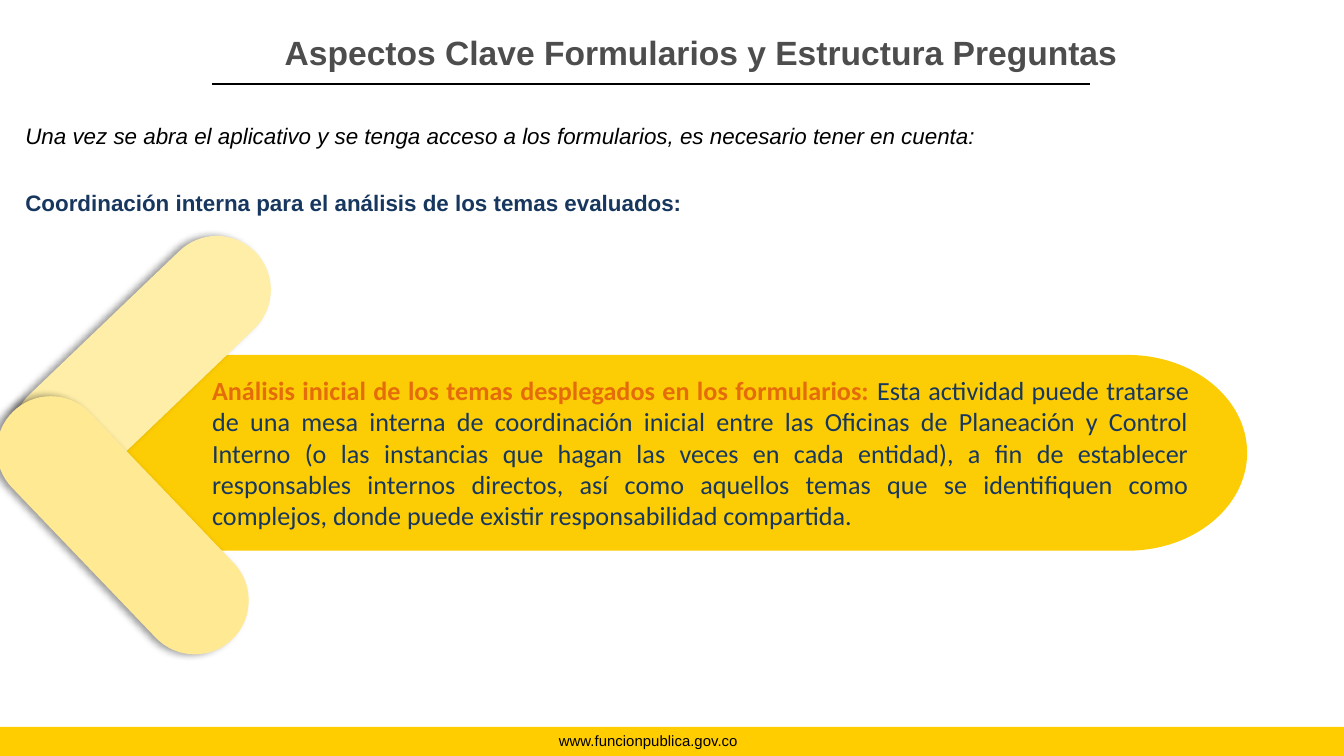
import math
from lxml import etree
from pptx import Presentation
from pptx import util as u
from pptx.dml.color import RGBColor
from pptx.enum import shapes, text
from pptx.oxml import parse_xml
from pptx.oxml.ns import qn

Cm, Pt = u.Cm, u.Pt
BLACK = RGBColor(0x00, 0x00, 0x00)
GREY = RGBColor(0x4D, 0x4D, 0x4D)
NAVY = RGBColor(0x17, 0x37, 0x5E)
ORANGE = RGBColor(0xE4, 0x6C, 0x0A)
FOOTER_YELLOW = RGBColor(0xFF, 0xCD, 0x00)
PILL_YELLOW = RGBColor(0xFC, 0xCC, 0x04)
UPPER_CREAM = RGBColor(0xFF, 0xEE, 0xA7)
LOWER_CREAM = RGBColor(0xFF, 0xEA, 0x93)

SHADOW = (
    '<a:effectLst xmlns:a="http://schemas.openxmlformats.org/drawingml/2006/main">'
    '<a:outerShdw blurRad="50800" dist="38100" dir="10800000" rotWithShape="0">'
    '<a:srgbClr val="000000"><a:alpha val="40000"/></a:srgbClr>'
    '</a:outerShdw></a:effectLst>'
)


def arc(cx, cy, rx, ry, *degrees):
    """A line to the first angle, then one Bézier curve to each further angle."""
    def point(a, k):
        return (cx + rx * (math.cos(a) - k * math.sin(a)),
                cy + ry * (math.sin(a) + k * math.cos(a)))
    angles = [math.radians(d) for d in degrees]
    steps = [[point(angles[0], 0)]]
    for a, b in zip(angles, angles[1:]):
        k = 4 / 3 * math.tan((b - a) / 4)
        steps.append([point(a, k), point(b, -k), point(b, 0)])
    return steps


def outline(steps, color):
    """Closed freeform in cm; a step of one point is a line, of three a curve."""
    pts = [(Cm(x), Cm(y)) for step in steps for x, y in step]
    builder = s.shapes.build_freeform(*pts[0])
    builder.add_line_segments(pts[1:], close=True)
    sp = builder.convert_to_shape()
    lines = iter(list(sp._element.iter(qn("a:lnTo"))))
    for step in steps[1:]:
        first = next(lines)
        if len(step) == 3:
            first.tag = qn("a:cubicBezTo")
            for extra in (next(lines), next(lines)):
                first.append(extra[0])
                extra.getparent().remove(extra)
    sp.shadow.inherit = False
    sp.fill.solid()
    sp.fill.fore_color.rgb = color
    sp.line.fill.background()
    return sp


prs = Presentation()
prs.slide_width, prs.slide_height = Cm(25.4), Cm(14.29)
s = prs.slides.add_slide(prs.slide_layouts[5])

# Footer band and title rule
band = s.shapes.add_shape(shapes.MSO_SHAPE.RECTANGLE, 0, Cm(13.74), Cm(25.4), Cm(0.55))
band.shadow.inherit = False
band.fill.solid()
band.fill.fore_color.rgb = FOOTER_YELLOW
band.line.fill.background()

rule = s.shapes.add_connector(
    shapes.MSO_CONNECTOR.STRAIGHT, Cm(4.01), Cm(1.58), Cm(20.6), Cm(1.58))
rule.line.color.rgb = BLACK
rule.line.width = Pt(1)
etree.SubElement(rule.line._ln.getparent(), qn("a:effectLst"))

# Pill with a rounded right end
left_end = [(1.8, 10.41), (0.94, 9.73), (0.71, 9.47), (0.41, 8.56), (0.71, 7.67), (0.99, 7.39)]
outline([[(1.8, 6.71)]] + arc(21.31, 8.56, 2.26, 1.85, -90, 0, 90)
        + [[point] for point in left_end], PILL_YELLOW)

# Chevron: the same capsule twice, the lower arm turned a quarter
capsule = arc(4.1, 5.48, 1.02, 1.02, -134, -90, 0, 46) + arc(1.26, 8.2, 1.02, 1.02, 46, 90, 180, 226)
for cx, cy, rotation, color in [(2.68, 6.84, 0, UPPER_CREAM), (2.32, 9.93, 90, LOWER_CREAM)]:
    arm = outline(capsule, color)
    arm.left = Cm(cx) - arm.width // 2
    arm.top = Cm(cy) - arm.height // 2
    arm.rotation = rotation
    effects = arm._element.spPr.find(qn("a:effectLst"))
    effects.getparent().replace(effects, parse_xml(SHADOW))

# Title and texts: position in cm, alignment, side inset, runs
LEFT, CENTER, JUSTIFY = text.PP_ALIGN.LEFT, text.PP_ALIGN.CENTER, text.PP_ALIGN.JUSTIFY
small = {"name": "Arial", "size": Pt(8)}
heading = {"name": "Arial", "size": Pt(18), "bold": True}
intro = {"name": "Arial", "size": Pt(12), "italic": True}
subtitle = {"name": "Arial", "size": Pt(12), "bold": True}
lead = {"name": "Calibri", "size": Pt(14), "bold": True}
body = {"name": "Calibri", "size": Pt(14), "bold": False}

texts = [
    ((5.13, 0.48, 16.64, 1.09), LEFT, 0.25,
     [("Aspectos Clave Formularios y Estructura Preguntas", heading, GREY)]),
    ((9.22, 13.7, 6.07, 0.61), CENTER, 0.25,
     [("www.funcionpublica.gov.co", small, BLACK)]),
    ((0.23, 2.18, 24.18, 0.76), JUSTIFY, 0.25,
     [("Una vez se abra el aplicativo y se tenga acceso a los formularios, "
       "es necesario tener en cuenta:", intro, BLACK)]),
    ((4.01, 6.95, 18.47, 3.25), JUSTIFY, 0,
     [("Análisis inicial de los temas desplegados en los formularios:", lead, ORANGE),
      (" Esta actividad puede tratarse de una mesa interna de coordinación inicial "
       "entre las Oficinas de Planeación y Control Interno (o las instancias que hagan "
       "las veces en cada entidad), a fin de establecer responsables internos directos, "
       "así como aquellos temas que se identifiquen como complejos, donde puede existir "
       "responsabilidad compartida.", body, NAVY)]),
    ((0.23, 3.45, 13.11, 0.76), JUSTIFY, 0.25,
     [("Coordinación interna para el análisis de los temas evaluados:", subtitle, NAVY)]),
]
for i, (place, align, inset, runs) in enumerate(texts):
    box = [Cm(v) for v in place]
    if i == 0:
        sp = s.shapes.title
        sp.left, sp.top, sp.width, sp.height = box
    else:
        sp = s.shapes.add_textbox(*box)
    tf = sp.text_frame
    tf.word_wrap = True
    tf.auto_size = text.MSO_AUTO_SIZE.SHAPE_TO_FIT_TEXT if i else text.MSO_AUTO_SIZE.NONE
    tf.vertical_anchor = text.MSO_ANCHOR.TOP if i else text.MSO_ANCHOR.MIDDLE
    tf.margin_left = tf.margin_right = Cm(inset)
    p = tf.paragraphs[0]
    p.alignment = align
    p.line_spacing = 1.0 if i else 0.9
    for words, fmt, color in runs:
        r = p.add_run()
        r.text = words
        for key, value in fmt.items():
            setattr(r.font, key, value)
        r.font.color.rgb = color

prs.save("out.pptx")
